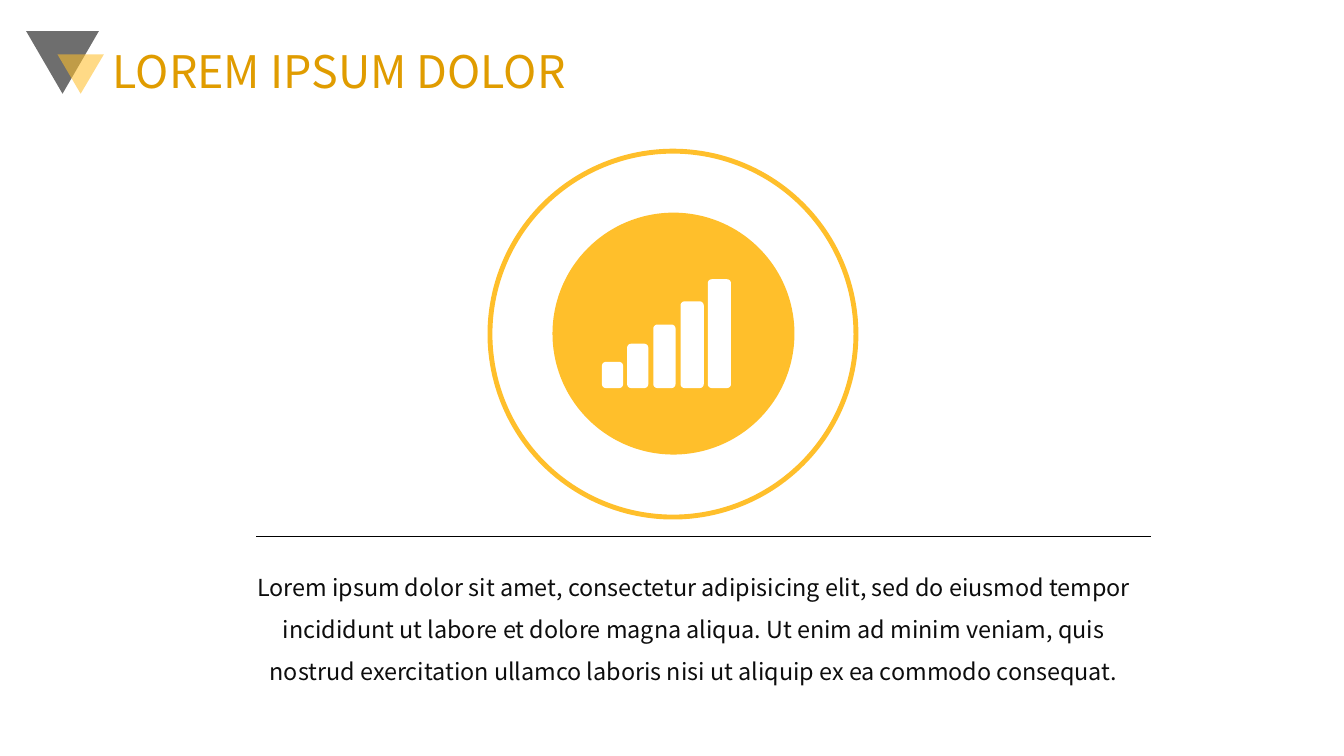
import math

from lxml import etree
from pptx import Presentation
from pptx import util as u
from pptx.dml.color import RGBColor
from pptx.enum import shapes, text
from pptx.oxml.ns import qn

FONT = "Noto Sans CJK JP"
GOLD = "FFBF2B"

prs = Presentation()
prs.slide_width, prs.slide_height = u.Inches(13.33), u.Inches(7.5)
s = prs.slides.add_slide(prs.slide_layouts[6])


def style_shape(sp, fill=None, line=None, alpha=None):
    sp.shadow.inherit = False
    if fill:
        sp.fill.solid()
        sp.fill.fore_color.rgb = RGBColor.from_string(fill)
    else:
        sp.fill.background()
    if line:
        sp.line.color.rgb = RGBColor.from_string(line)
        sp.line.width = u.Pt(3.5)
    else:
        sp.line.fill.background()
    if alpha:
        clr = sp.fill._xPr.find(qn("a:solidFill"))[0]
        etree.SubElement(clr, qn("a:alpha")).set("val", str(alpha * 1000))


def add_text(box, words, size, color, spacing, align, anchor):
    tf = s.shapes.add_textbox(*map(u.Inches, box)).text_frame
    tf.word_wrap = True
    tf.vertical_anchor = anchor
    p = tf.paragraphs[0]
    p.alignment = align
    p.line_spacing = spacing
    r = p.add_run()
    r.text = words
    r.font.name = FONT
    r.font.size = u.Pt(size)
    r.font.color.rgb = RGBColor.from_string(color)


for box, color in [((0.26, 0.31, 0.72, 0.62), "000000"), ((0.57, 0.54, 0.46, 0.39), GOLD)]:
    sp = s.shapes.add_shape(shapes.MSO_SHAPE.ISOSCELES_TRIANGLE, *map(u.Inches, box))
    sp.rotation = 180
    style_shape(sp, fill=color, alpha=57)

for box, look in [((4.86, 1.5, 3.63, 3.63), {"line": GOLD}), ((5.48, 2.11, 2.4, 2.4), {"fill": GOLD})]:
    sp = s.shapes.add_shape(shapes.MSO_SHAPE.OVAL, *map(u.Inches, box))
    style_shape(sp, **look)

bottom, radius = 3.85, 0.04
bars = None
for left, right, top in [(5.97, 6.18, 3.59), (6.22, 6.43, 3.41), (6.48, 6.7, 3.22),
                         (6.75, 6.98, 2.99), (7.02, 7.25, 2.77)]:
    corners = [(right - radius, bottom - radius), (left + radius, bottom - radius),
               (left + radius, top + radius), (right - radius, top + radius)]
    points = []
    for i, (cx, cy) in enumerate(corners):
        for step in range(7):
            angle = math.radians(90 * i + 15 * step)
            points.append((u.Inches(cx + radius * math.cos(angle)),
                           u.Inches(cy + radius * math.sin(angle))))
    if bars is None:
        bars = s.shapes.build_freeform(*points[0])
    else:
        bars.move_to(*points[0])
    bars.add_line_segments(points[1:], close=True)
style_shape(bars.convert_to_shape(), fill="FFFFFF")

rule = s.shapes.add_connector(shapes.MSO_CONNECTOR.STRAIGHT, u.Inches(2.54), u.Inches(5.32),
                              u.Inches(11.42), u.Inches(5.32))
rule.line.color.rgb = RGBColor.from_string("000000")
rule.line.width = u.Pt(0.5)
etree.SubElement(rule._element.spPr, qn("a:effectLst"))

add_text((2.36, 5.5, 9.04, 1.48),
         "Lorem ipsum dolor sit amet, consectetur adipisicing elit, sed do eiusmod tempor "
         "incididunt ut labore et dolore magna aliqua. Ut enim ad minim veniam, quis nostrud "
         "exercitation ullamco laboris nisi ut aliquip ex ea commodo consequat.",
         16.7, "0D0D0D", 1.5, text.PP_ALIGN.CENTER, text.MSO_ANCHOR.TOP)
add_text((1.02, 0.31, 11.5, 0.85), "LOREM IPSUM DOLOR", 32, "E09C00", 0.9,
         text.PP_ALIGN.LEFT, text.MSO_ANCHOR.MIDDLE)

prs.save("out.pptx")
